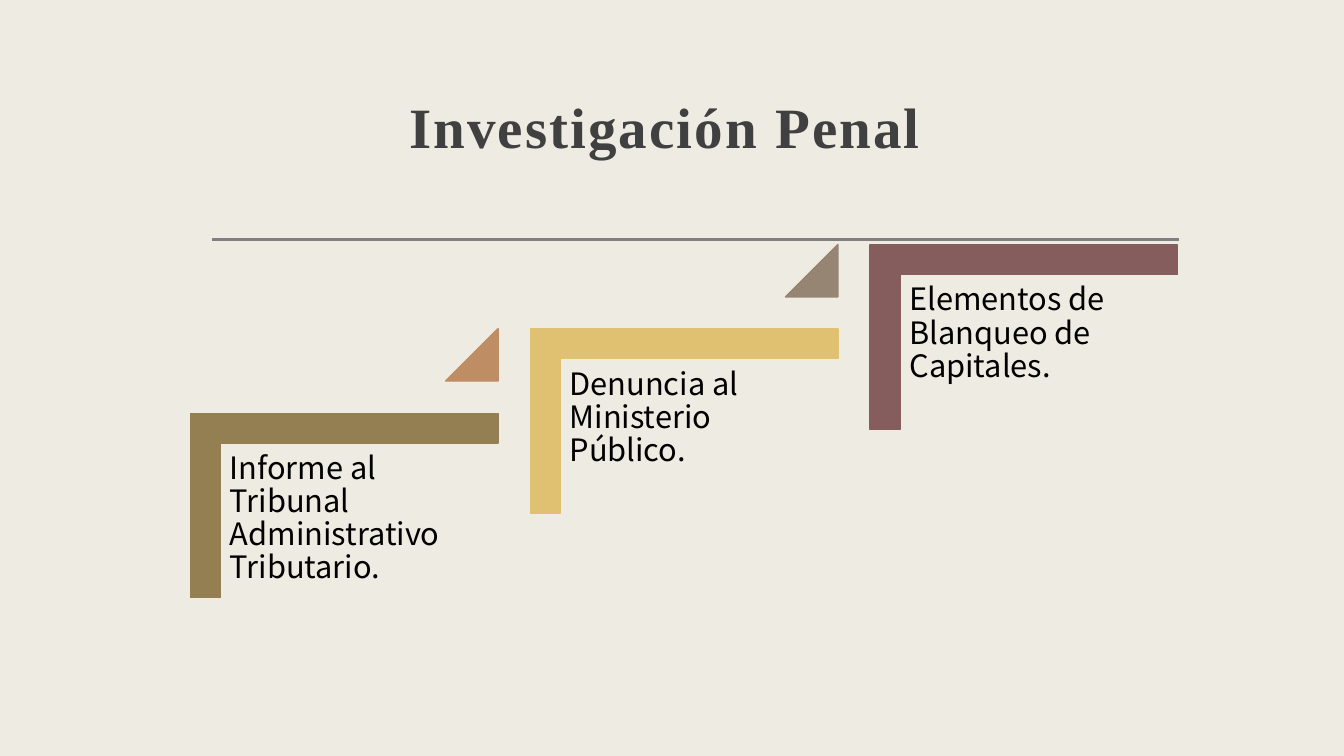
"""Build the "Investigación Penal" slide: three rising steps under a title."""
from pptx import Presentation
from pptx import util as u
from pptx.dml.color import RGBColor
from pptx.enum import shapes, text
from pptx.oxml import ns
from lxml import etree

COLORS = {
    "background": "EEEBE2", "title": "404040", "rule": "808080", "text": "000000",
    "olive": "947F53", "gold": "E0C171", "wine": "855D5D",
    "copper": "BE8D64", "taupe": "968572",
}
TITLE = "Investigación Penal"
STEPS = [
    ("Informe al Tribunal Administrativo Tributario.", "olive", "copper"),
    ("Denuncia al Ministerio Público.", "gold", "taupe"),
    ("Elementos de Blanqueo de Capitales.", "wine", None),
]
STEP_RIGHT, STEP_UP = 3.37, 0.835
CORNER = (2.5, 3.49, 1.83, 3.05)
LABEL = (2.19, 4.4, 2.75, 2.41)
TRIANGLE = (4.42, 3.26, 0.52, 0.52)
TITLE_BOX = (1.8, 0.69, 9.59, 1)
RULE = (2.1, 2.38, 11.69, 2.38)


def color(name):
    return RGBColor.from_string(COLORS[name])


def set_all(target, values):
    for name, value in values.items():
        setattr(target, name, value)


def inches(values):
    return [u.Inches(value) for value in values]


def write(box, words, margins, anchor, para_format, font_format, font_color):
    frame = box.text_frame
    sides = ("margin_left", "margin_top", "margin_right", "margin_bottom")
    set_all(frame, dict(zip(sides, inches(margins))))
    set_all(frame, {"word_wrap": True, "auto_size": text.MSO_AUTO_SIZE.NONE,
                    "vertical_anchor": anchor})
    para = frame.paragraphs[0]
    set_all(para, para_format)
    span = para.add_run()
    span.text = words
    set_all(span.font, font_format)
    span.font.color.rgb = color(font_color)
    return span


def add_step_shape(page, kind, place, fill, adjustments, rotation=0):
    shape = page.shapes.add_shape(kind, *inches(place))
    shape.shadow.inherit = False
    shape.rotation = rotation
    for index, value in enumerate(adjustments):
        shape.adjustments[index] = value
    shape.fill.solid()
    shape.fill.fore_color.rgb = color(fill)
    shape.line.color.rgb = color(fill)
    shape.line.width = u.Pt(1)


def add_rule(page):
    rule = page.shapes.add_connector(shapes.MSO_CONNECTOR.STRAIGHT, *inches(RULE))
    rule.line.color.rgb = color("rule")
    rule.line.width = u.Pt(2)
    etree.SubElement(rule._element.spPr, ns.qn("a:effectLst"))


def add_title(page):
    title = page.shapes.title
    set_all(title, dict(zip(("left", "top", "width", "height"), inches(TITLE_BOX))))
    span = write(title, TITLE, (0.12, 0.12, 0.12, 0.1), text.MSO_ANCHOR.BOTTOM,
                 {"alignment": text.PP_ALIGN.CENTER, "line_spacing": 1.2},
                 {"name": "Times New Roman", "size": u.Pt(40.7), "bold": True}, "title")
    span._r.get_or_add_rPr().set("spc", "150")


def add_step(page, index, words, corner_color, triangle_color):
    def shifted(place):
        left, top, width, height = place
        return left + index * STEP_RIGHT, top - index * STEP_UP, width, height

    add_step_shape(page, shapes.MSO_SHAPE.CORNER, shifted(CORNER), corner_color,
                   (0.161, 0.161), 90)
    label = page.shapes.add_textbox(*inches(shifted(LABEL)))
    write(label, words, (0.09,) * 4, text.MSO_ANCHOR.TOP,
          {"alignment": text.PP_ALIGN.LEFT, "line_spacing": 0.9},
          {"name": "Noto Sans CJK JP", "size": u.Pt(22)}, "text")
    if triangle_color:
        add_step_shape(page, shapes.MSO_SHAPE.ISOSCELES_TRIANGLE, shifted(TRIANGLE),
                       triangle_color, (1,))


def main():
    deck = Presentation()
    set_all(deck, {"slide_width": u.Inches(13.33), "slide_height": u.Inches(7.5)})
    page = deck.slides.add_slide(deck.slide_layouts[5])
    page.background.fill.solid()
    page.background.fill.fore_color.rgb = color("background")
    add_rule(page)
    add_title(page)
    for index, step in enumerate(STEPS):
        add_step(page, index, *step)
    deck.save("out.pptx")


if __name__ == "__main__":
    main()
